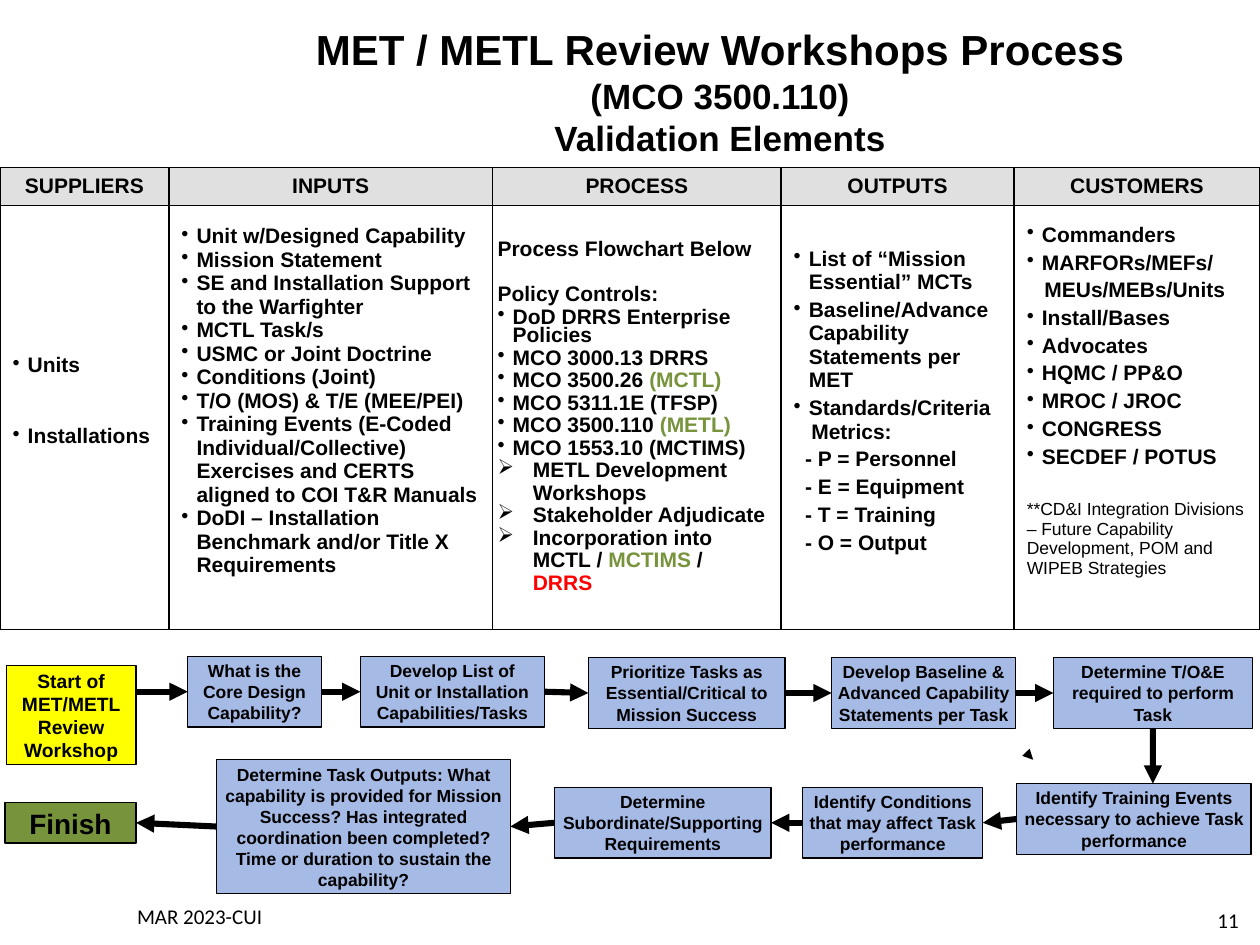
from lxml.etree import SubElement
from pptx import Presentation
from pptx.dml.color import RGBColor
from pptx.enum.shapes import MSO_CONNECTOR as Connector, MSO_SHAPE as Shape
from pptx.enum.text import MSO_ANCHOR as Anchor, MSO_AUTO_SIZE as AutoSize, PP_ALIGN as Align
from pptx.oxml.ns import qn
from pptx.util import Inches, Pt

BLACK = RGBColor(0, 0, 0)
GRAY = RGBColor(0xE0, 0xE0, 0xE0)
BLUE = RGBColor(0x36, 0x63, 0xC8)
GREEN = RGBColor(0x77, 0x93, 0x3C)
YELLOW = RGBColor(0xFF, 0xFF, 0)
RED = RGBColor(0xFF, 0, 0)
TOP, LEFT, BOTTOM, RIGHT = range(4)

TITLE = [("MET / METL Review Workshops Process", 24), ("(MCO 3500.110)", 20), ("Validation Elements", 20)]

# Paragraph kinds: bullet, left margin, first-line indent
KINDS = {
    "dot": ("•", 0.12, -0.12),
    "arrow": ("➢", 0.28, -0.28),
    "under": (None, 0.28, 0),
    "plain": (None, 0, 0),
    "inset": (None, 0.14, 0),
    "dash": (None, 0.09, 0),
}

# Items: kind, text or coloured runs, then any space before that differs from the column's
COLUMNS = [
    {"head": "SUPPLIERS", "width": 1.34, "gap": 0, "items": [
        ("dot", "Units"), ("dot", "Installations", 27)]},
    {"head": "INPUTS", "width": 2.57, "gap": 0, "items": [
        ("dot", "Unit w/Designed Capability"),
        ("dot", "Mission Statement"),
        ("dot", "SE and Installation Support to the Warfighter"),
        ("dot", "MCTL Task/s"),
        ("dot", "USMC or Joint Doctrine"),
        ("dot", "Conditions (Joint)"),
        ("dot", "T/O (MOS) & T/E (MEE/PEI)"),
        ("dot", "Training Events (E-Coded Individual/Collective) Exercises and CERTS "
                "aligned to COI T&R Manuals"),
        ("dot", "DoDI – Installation Benchmark and/or Title X Requirements")]},
    {"head": "PROCESS", "width": 2.29, "gap": 2.1, "tight": True, "items": [
        ("plain", "Process Flowchart Below"),
        ("plain", "Policy Controls:", 15.2),
        ("dot", "DoD DRRS Enterprise Policies"),
        ("dot", "MCO 3000.13 DRRS"),
        ("dot", [("MCO 3500.26 ", BLACK), ("(MCTL)", GREEN)]),
        ("dot", "MCO 5311.1E (TFSP)"),
        ("dot", [("MCO 3500.110 ", BLACK), ("(METL)", GREEN)]),
        ("dot", "MCO 1553.10 (MCTIMS)"),
        ("arrow", "METL Development"),
        ("under", "Workshops"),
        ("arrow", "Stakeholder Adjudicate"),
        ("arrow", "Incorporation into"),
        ("under", [("MCTL / ", BLACK), ("MCTIMS ", GREEN), ("/", BLACK)]),
        ("under", [("DRRS", RED)])]},
    {"head": "OUTPUTS", "width": 1.85, "gap": 2.4, "items": [
        ("dot", "List of “Mission Essential” MCTs"),
        ("dot", "Baseline/Advance Capability Statements per MET"),
        ("dot", "Standards/Criteria"),
        ("inset", "Metrics:", 0),
        ("dash", "- P = Personnel"),
        ("dash", "- E = Equipment"),
        ("dash", "- T = Training"),
        ("dash", "- O = Output")]},
    {"head": "CUSTOMERS", "width": 1.95, "gap": 2.4, "items": [
        ("dot", "Commanders"),
        ("dot", "MARFORs/MEFs/"),
        ("inset", "MEUs/MEBs/Units"),
        ("dot", "Install/Bases"),
        ("dot", "Advocates"),
        ("dot", "HQMC / PP&O"),
        ("dot", "MROC / JROC"),
        ("dot", "CONGRESS"),
        ("dot", "SECDEF / POTUS"),
        ("plain", "**CD&I Integration Divisions – Future Capability Development, "
                  "POM and WIPEB Strategies", 18)]},
]
ROW_HEIGHTS = [0.28, 2.92, 0.26]

# Flowchart steps: left, top, width, height, text, fill, text size
STEPS = {
    "start": (0.05, 5.28, 1.03, 0.79, "Start of MET/METL Review Workshop", YELLOW, 11),
    "design": (1.49, 5.21, 1.06, 0.56, "What is the Core Design Capability?", BLUE, 10),
    "list": (2.86, 5.21, 1.46, 0.56, "Develop List of\nUnit or Installation Capabilities/Tasks", BLUE, 10),
    "prioritize": (4.67, 5.22, 1.56, 0.56, "Prioritize Tasks as Essential/Critical to Mission Success", BLUE, 10),
    "baseline": (6.6, 5.22, 1.46, 0.56, "Develop Baseline & Advanced Capability Statements per Task", BLUE, 10),
    "equipment": (8.36, 5.22, 1.58, 0.56, "Determine T/O&E required to perform Task", BLUE, 10),
    "training": (8.07, 6.22, 1.86, 0.56, "Identify Training Events necessary to achieve Task performance", BLUE, 10),
    "conditions": (6.37, 6.25, 1.43, 0.56, "Identify Conditions that may affect Task performance", BLUE, 10),
    "support": (4.4, 6.25, 1.72, 0.56, "Determine Subordinate/Supporting Requirements", BLUE, 10),
    "outputs": (1.72, 6.03, 2.33, 1.06,
                "Determine Task Outputs: What capability is provided for Mission Success? Has integrated "
                "coordination been completed? Time or duration to sustain the capability?", BLUE, 10),
    "finish": (0.04, 6.37, 1.04, 0.32, "Finish", GREEN, 16),
}

# Arrow ends: a step and its side, or a point; then the line width
ARROWS = [
    ((1.08, 5.49), ("design", LEFT), 3.5),
    (("design", RIGHT), ("list", LEFT), 3.5),
    (("list", RIGHT), ("prioritize", LEFT), 3.5),
    (("prioritize", RIGHT), ("baseline", LEFT), 3.5),
    (("baseline", RIGHT), ("equipment", LEFT), 3.5),
    (("equipment", BOTTOM), (9.15, 6.22), 3.5),
    (("training", LEFT), ("conditions", RIGHT), 3.5),
    (("conditions", LEFT), ("support", RIGHT), 3.5),
    (("support", LEFT), ("outputs", RIGHT), 3.5),
    (("outputs", LEFT), ("finish", RIGHT), 3.5),
    ((8.19, 6.02), (8.2, 6.03), 0.75),
]


def add_span(para, text, size, color=BLACK, bold=True, font="Arial"):
    span = para.add_run()
    span.text = text
    span.font.name, span.font.size, span.font.bold = font, Pt(size), bold
    span.font.color.rgb = color


def add_text(left, top, width, height, lines, align, anchor, font="Arial", bold=True):
    box = page.shapes.add_textbox(Inches(left), Inches(top), Inches(width), Inches(height))
    frame = box.text_frame
    frame.word_wrap, frame.vertical_anchor = True, anchor
    for index, (text, size) in enumerate(lines):
        para = frame.paragraphs[0] if index == 0 else frame.add_paragraph()
        para.alignment = align
        add_span(para, text, size, bold=bold, font=font)


def style_cell(cell, sides, fill=None):
    """Draw the named sides in black, clear the others, and set the fill."""
    props = cell._tc.get_or_add_tcPr()
    for side in "LRTB":
        line = SubElement(props, qn(f"a:ln{side}"), w=str(Pt(1)))
        if side in sides:
            SubElement(SubElement(line, qn("a:solidFill")), qn("a:srgbClr"), val=str(BLACK))
        else:
            SubElement(line, qn("a:noFill"))
    if fill is None:
        cell.fill.background()
    else:
        cell.fill.solid()
        cell.fill.fore_color.rgb = fill
    cell.vertical_anchor = Anchor.MIDDLE


def fill_cell(cell, column):
    tight = column.get("tight", False)
    cell.margin_left = cell.margin_right = Inches(0.04 if tight else 0.1)
    cell.margin_top = cell.margin_bottom = Inches(0 if tight else 0.05)
    for index, (kind, content, *gap) in enumerate(column["items"]):
        para = cell.text_frame.paragraphs[0] if index == 0 else cell.text_frame.add_paragraph()
        if index:
            para.space_before = Pt(gap[0] if gap else column["gap"])
        if tight:
            para.line_spacing = 0.8
        bullet, margin, indent = KINDS[kind]
        props = para._p.get_or_add_pPr()
        props.set("marL", str(Inches(margin)))
        props.set("indent", str(Inches(indent)))
        if bullet:
            SubElement(props, qn("a:buChar"), char=bullet)
        note = isinstance(content, str) and content.startswith("**")
        runs = [(content, BLACK)] if isinstance(content, str) else content
        for text, color in runs:
            add_span(para, text, 10 if note else 12, color, bold=not note)


deck = Presentation()
deck.slide_width, deck.slide_height = Inches(10), Inches(7.5)
page = deck.slides.add_slide(deck.slide_layouts[6])

# Title, date and page number
add_text(1.58, 0.14, 8.27, 1.18, TITLE, Align.CENTER, Anchor.TOP)
add_text(0, 7.07, 3.17, 0.4, [("MAR 2023-CUI", 12)], Align.CENTER, Anchor.MIDDLE, "Calibri", False)
add_text(7.6, 7.1, 2.33, 0.4, [("11", 12)], Align.RIGHT, Anchor.MIDDLE, "Calibri", False)

# Table: the lower two rows read as one, and PROCESS spans both
table = page.shapes.add_table(3, len(COLUMNS), 0, Inches(1.33), Inches(10), Inches(sum(ROW_HEIGHTS))).table
table.first_row = table.horz_banding = False
for row, height in zip(table.rows, ROW_HEIGHTS):
    row.height = Inches(height)
for number, column in enumerate(COLUMNS):
    table.columns[number].width = Inches(column["width"])
    head, body, foot = (table.cell(row, number) for row in range(3))
    para = head.text_frame.paragraphs[0]
    para.alignment = Align.CENTER
    add_span(para, column["head"], 12)
    style_cell(head, "LRTB", GRAY)
    spans = column.get("tight", False)
    if spans:
        body.merge(foot)
    style_cell(body, "LRTB" if spans else "LRT")
    style_cell(foot, "LRB")
    fill_cell(body, column)
    SubElement(foot.text_frame.paragraphs[0]._p, qn("a:endParaRPr"), sz="1000")

# Flowchart steps
boxes = {}
for name, (left, top, width, height, text, fill, size) in STEPS.items():
    box = page.shapes.add_shape(Shape.RECTANGLE, Inches(left), Inches(top), Inches(width), Inches(height))
    boxes[name] = box
    box.shadow.inherit = False
    box.fill.solid()
    box.fill.fore_color.rgb = fill
    if fill == BLUE:
        SubElement(box.fill._xPr.find(".//" + qn("a:srgbClr")), qn("a:alpha"), val="44000")
    box.line.color.rgb, box.line.width = BLACK, Pt(0.75)
    frame = box.text_frame
    frame.margin_left = frame.margin_right = frame.margin_top = frame.margin_bottom = Inches(0.03)
    frame.word_wrap, frame.vertical_anchor = True, Anchor.TOP
    frame.auto_size = AutoSize.SHAPE_TO_FIT_TEXT
    for index, line in enumerate(text.split("\n")):
        para = frame.paragraphs[0] if index == 0 else frame.add_paragraph()
        para.alignment = Align.CENTER
        add_span(para, line, size)

# Arrows
for start, end, width in ARROWS:
    points = [Inches(value) if not isinstance(spot[0], str) else 0 for spot in (start, end) for value in
              (spot if not isinstance(spot[0], str) else (0, 0))]
    arrow = page.shapes.add_connector(Connector.STRAIGHT, *points)
    for spot, join in ((start, arrow.begin_connect), (end, arrow.end_connect)):
        if isinstance(spot[0], str):
            join(boxes[spot[0]], spot[1])
    arrow.line.color.rgb, arrow.line.width = BLACK, Pt(width)
    SubElement(arrow.line._get_or_add_ln(), qn("a:tailEnd"), type="triangle")
    SubElement(arrow._element.spPr, qn("a:effectLst"))

deck.save("out.pptx")
